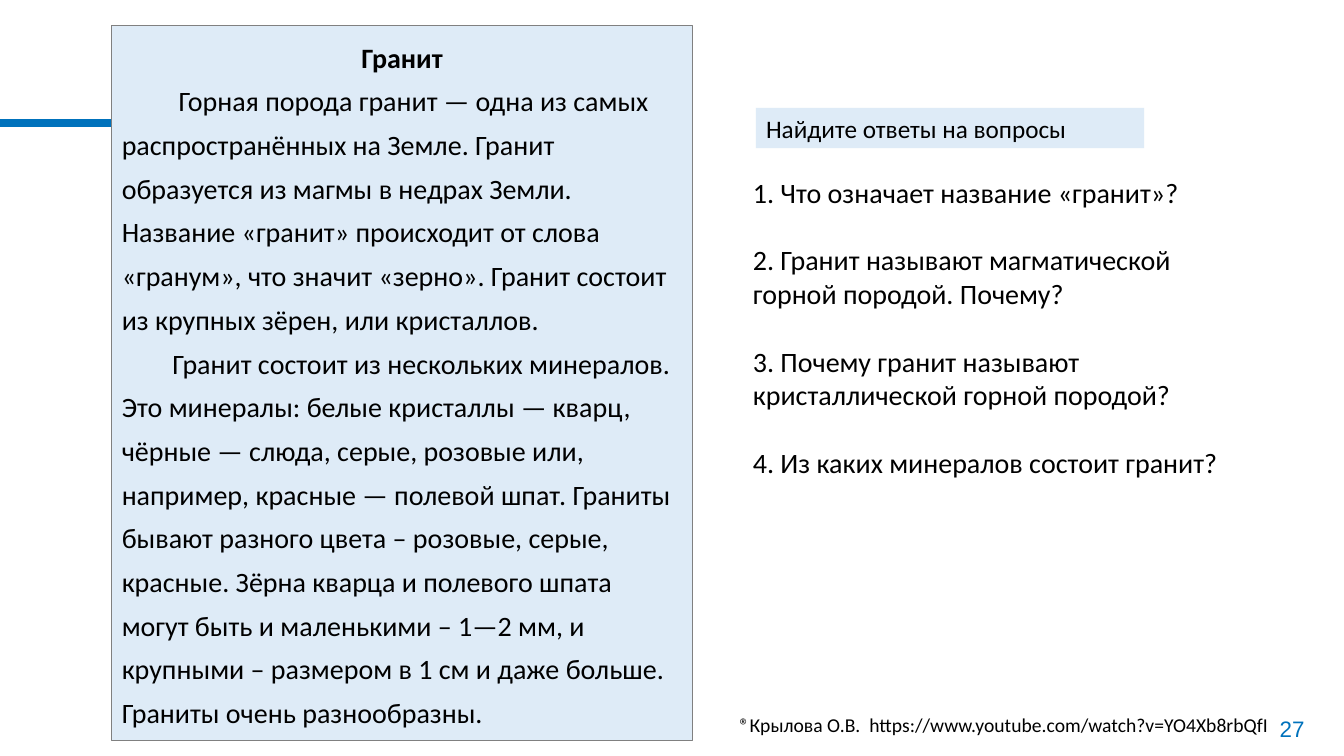
from pptx import Presentation
from pptx.dml.color import RGBColor
from pptx.enum.shapes import MSO_CONNECTOR, MSO_SHAPE
from pptx.enum.text import MSO_ANCHOR, MSO_AUTO_SIZE, PP_ALIGN
from pptx.oxml.ns import qn
from pptx.util import Pt
from lxml import etree

STRAIGHT = MSO_CONNECTOR.STRAIGHT
RECTANGLE = MSO_SHAPE.RECTANGLE
TOP, MIDDLE = MSO_ANCHOR.TOP, MSO_ANCHOR.MIDDLE
LEFT, CENTER = PP_ALIGN.LEFT, PP_ALIGN.CENTER
NO_AUTOFIT = MSO_AUTO_SIZE.NONE

BLUE, PALE_BLUE, GRAY, BLACK = "0072BC", "DEEBF7", "808080", "000000"

HEADING = "Найдите ответы на вопросы"
QUESTIONS = [
    "1. Что означает название «гранит»?",
    "2. Гранит называют магматической горной породой. Почему?",
    "3. Почему гранит называют кристаллической горной породой?",
    "4. Из каких минералов состоит гранит?",
]
ORIGIN = (
    "Горная порода гранит — одна из самых распространённых на Земле. "
    "Гранит образуется из магмы в недрах Земли. Название «гранит» происходит "
    "от слова «гранум», что значит «зерно». Гранит состоит из крупных зёрен, "
    "или кристаллов."
)
MINERALS = (
    "Гранит состоит из нескольких минералов. Это минералы: белые кристаллы — "
    "кварц, чёрные — слюда, серые, розовые или, например, красные — полевой "
    "шпат. Граниты бывают разного цвета – розовые, серые, красные. Зёрна кварца "
    "и полевого шпата могут быть и маленькими – 1—2 мм, и крупными – размером "
    "в 1 см и даже больше. Граниты очень разнообразны."
)
CREDIT = "®Крылова О.В.  https://www.youtube.com/watch?v=YO4Xb8rbQfI"


def color(value):
    """Turn a hex string into a colour."""
    return RGBColor.from_string(value)


def place(shape, left, top, width, height):
    """Position a shape, with lengths in points."""
    shape.left, shape.top = Pt(left), Pt(top)
    shape.width, shape.height = Pt(width), Pt(height)


def fill_shape(shape, value):
    """Give a shape a solid fill."""
    shape.fill.solid()
    shape.fill.fore_color.rgb = color(value)


def prepare_frame(shape, anchor=TOP):
    """Set wrapping and anchoring and return the text frame."""
    frame = shape.text_frame
    frame.word_wrap = True
    frame.auto_size = NO_AUTOFIT
    frame.vertical_anchor = anchor
    return frame


def write_paragraph(frame, text, size, first=False, align=LEFT, indent=0,
                    spacing=1.0, before=0, bold=False, font="Calibri", value=BLACK):
    """Write one unbulleted paragraph with a single run."""
    paragraph = frame.paragraphs[0] if first else frame.add_paragraph()
    properties = paragraph._p.get_or_add_pPr()
    properties.set("marL", "0")
    properties.set("indent", str(Pt(indent)))
    etree.SubElement(properties, qn("a:buNone"))
    paragraph.alignment = align
    paragraph.line_spacing = spacing
    paragraph.space_before = Pt(before)
    run = paragraph.add_run()
    run.text = text
    run.font.name = font
    run.font.size = Pt(size)
    run.font.bold = bold
    run.font.color.rgb = color(value)


def add_accent_line(slide):
    """Draw the thick accent line at the left edge."""
    line = slide.shapes.add_connector(STRAIGHT, Pt(0), Pt(87.8), Pt(146), Pt(87.8))
    line.line.color.rgb = color(BLUE)
    line.line.width = Pt(6)
    etree.SubElement(line._element.spPr, qn("a:effectLst"))


def add_article(slide):
    """Add the framed article about granite."""
    panel = slide.shapes.add_shape(RECTANGLE, Pt(79.9), Pt(18), Pt(414.7), Pt(511.2))
    panel.shadow.inherit = False
    fill_shape(panel, PALE_BLUE)
    panel.line.color.rgb = color(GRAY)
    panel.line.width = Pt(0.75)
    frame = prepare_frame(panel)
    write_paragraph(frame, "Гранит", 20, first=True, align=CENTER, spacing=1.3, bold=True)
    write_paragraph(frame, ORIGIN, 20, indent=40.7, spacing=1.3)
    write_paragraph(frame, MINERALS, 20, indent=36.2, spacing=1.3)


def add_heading(slide):
    """Format the title placeholder as the task heading."""
    title = slide.shapes.title
    place(title, 540, 77, 277.2, 28.8)
    fill_shape(title, PALE_BLUE)
    write_paragraph(prepare_frame(title), HEADING, 18, first=True)


def add_questions(slide):
    """Fill the body placeholder with the questions."""
    body = slide.placeholders[1]
    place(body, 530.6, 121.7, 367.2, 225.4)
    frame = prepare_frame(body)
    for index, question in enumerate(QUESTIONS):
        write_paragraph(frame, question, 20, first=index == 0, before=24.2 if index else 0)


def add_label(slide, text, box, size, anchor=TOP, **style):
    """Add a one-line text box."""
    label = slide.shapes.add_textbox(*map(Pt, box))
    write_paragraph(prepare_frame(label, anchor), text, size, first=True, **style)


def main():
    """Build and save the slide."""
    presentation = Presentation()
    presentation.slide_width, presentation.slide_height = Pt(960), Pt(540)
    slide = presentation.slides.add_slide(presentation.slide_layouts[1])
    add_accent_line(slide)
    add_article(slide)
    add_heading(slide)
    add_questions(slide)
    add_label(slide, CREDIT, (521.3, 505.4, 405.4, 24.5), 14)
    add_label(slide, "27", (894.2, 505.4, 57.6, 29.5), 16, MIDDLE,
              align=CENTER, font="Arial", value=BLUE)
    presentation.save("out.pptx")


if __name__ == "__main__":
    main()
